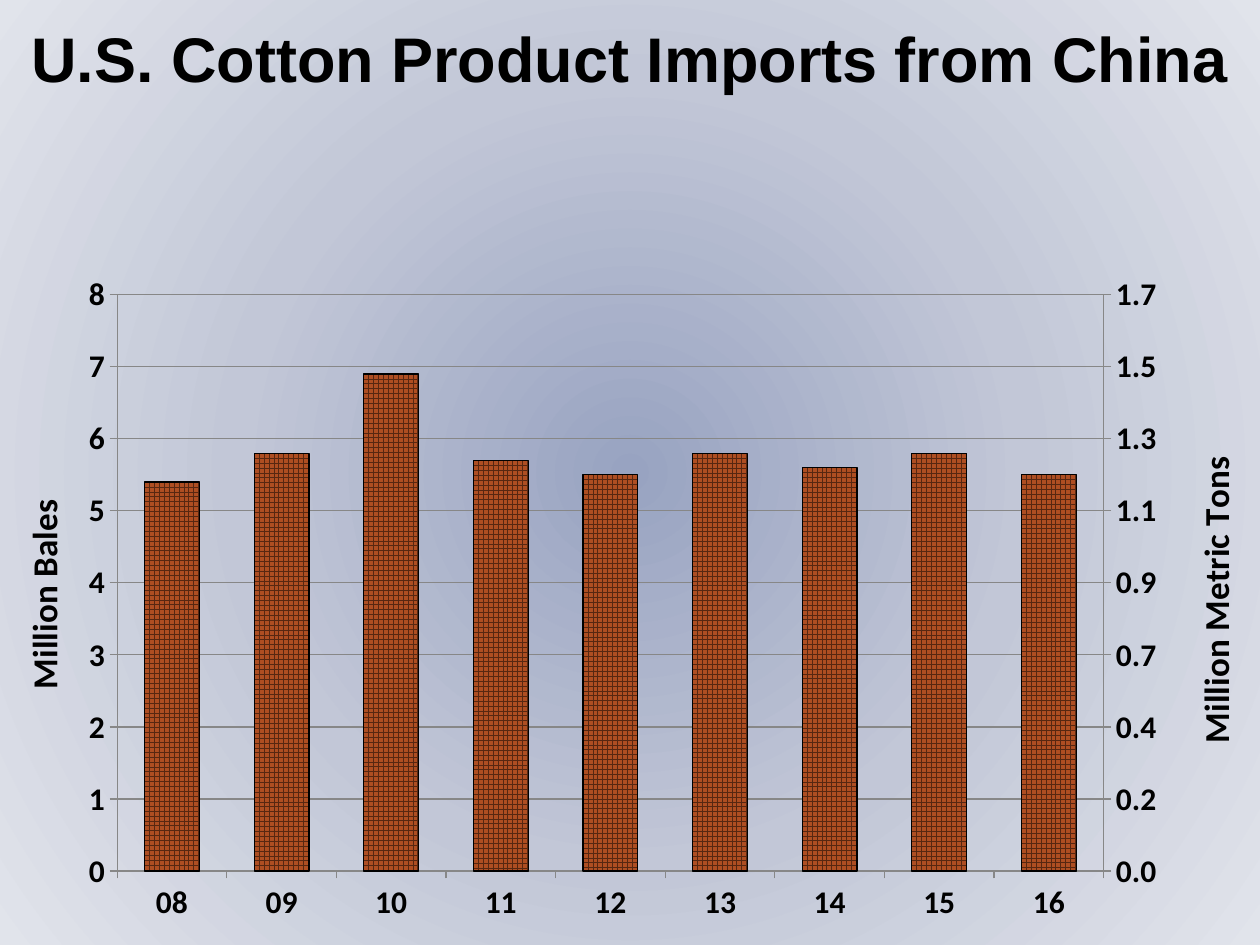
"""Build a slide with a two-scale column chart of cotton product imports."""
from copy import deepcopy

from pptx import Presentation
from pptx.chart.axis import CategoryAxis, ValueAxis
from pptx.chart.data import CategoryChartData
from pptx.dml.color import RGBColor
from pptx.enum.chart import XL_CHART_TYPE, XL_TICK_LABEL_POSITION, XL_TICK_MARK
from pptx.enum.dml import MSO_PATTERN
from pptx.enum.text import MSO_ANCHOR, PP_ALIGN
from pptx.oxml import parse_xml
from pptx.oxml.ns import nsdecls, qn
from pptx.util import Inches, Pt

TITLE = "U.S. Cotton Product Imports from China"
YEARS = ["08", "09", "10", "11", "12", "13", "14", "15", "16"]
SERIES = {
    "Million Bales": [5.4, 5.8, 6.9, 5.7, 5.5, 5.8, 5.6, 5.8, 5.5],
    "Million Metric Tons": [1.17, 1.26, 1.5, 1.25, 1.21, 1.26, 1.22, 1.26, 1.19],
}
BALES_MAX = 8
BALES_PER_TON = 4.59
GLOW = [(0, "98A3C1"), (50, "C2C7D7"), (100, "E1E4EB")]
GREY, BLACK = "878787", "000000"
PLOT_BOX = {"x": 0.093, "y": 0.093, "w": 0.783, "h": 0.804}
LEFT_TITLE, RIGHT_TITLE = {"x": 0.01, "y": 0.37}, {"x": 0.94, "y": 0.31}


def rgb(value):
    return RGBColor.from_string(value)


def set_format(obj, values):
    for name, value in values.items():
        setattr(obj, name, value)


def set_font(font, name, size):
    set_format(font, {"name": name, "size": Pt(size), "bold": True})
    font.color.rgb = rgb(BLACK)


def set_line(line, color, width=0):
    line.color.rgb = rgb(color)
    line.width = Pt(width)


def add_glow(s):
    stops = "".join(f'<a:gs pos="{pos * 1000}"><a:srgbClr val="{color}"/></a:gs>'
                    for pos, color in GLOW)
    centre = " ".join(f'{side}="50000"' for side in "ltrb")
    s.element.cSld.insert(0, parse_xml(
        f'<p:bg {nsdecls("p", "a")}><p:bgPr><a:gradFill><a:gsLst>{stops}</a:gsLst>'
        f'<a:path path="circle"><a:fillToRect {centre}/></a:path></a:gradFill>'
        '<a:effectLst/></p:bgPr></p:bg>'))


def place(parent, box, inner=False):
    """Give a chart part a manual layout in shares of the chart."""
    target = '<c:layoutTarget val="inner"/>' if inner else ""
    modes = "".join(f'<c:{key}Mode val="edge"/>' for key in "xy")
    sizes = "".join(f'<c:{key} val="{value}"/>' for key, value in box.items())
    layout = parse_xml(f'<c:layout {nsdecls("c")}><c:manualLayout>{target}{modes}{sizes}'
                       '</c:manualLayout></c:layout>')
    old = parent.find(qn("c:layout"))
    if old is not None:
        parent.replace(old, layout)
    else:
        parent.insert(1 if parent.find(qn("c:tx")) is not None else 0, layout)


def add_right_axis(plot_area):
    """Move the second series to its own axes and return the value axis."""
    bars, cat, val = (plot_area.find(qn(f"c:{tag}")) for tag in ("barChart", "catAx", "valAx"))
    bars2, cat2, val2 = (deepcopy(part) for part in (bars, cat, val))
    bars.remove(bars.findall(qn("c:ser"))[1])
    bars2.remove(bars2.findall(qn("c:ser"))[0])
    bars.addnext(bars2)
    val.addnext(cat2)
    cat2.addnext(val2)
    ids = {ax.find(qn("c:axId")).get("val"): new for ax, new in ((cat, "5001"), (val, "5002"))}
    for part in (bars2, cat2, val2):
        for ref in part.findall(qn("c:axId")) + part.findall(qn("c:crossAx")):
            ref.set("val", ids[ref.get("val")])
    for tag, value in (("axPos", "r"), ("crosses", "max")):
        val2.find(qn(f"c:{tag}")).set("val", value)
    CategoryAxis(cat2).visible = False
    return ValueAxis(val2)


def style_value_axis(axis, title, top, number_format, title_box, grid):
    set_format(axis, {"minimum_scale": 0, "maximum_scale": top, "major_unit": top / BALES_MAX,
                      "major_tick_mark": XL_TICK_MARK.OUTSIDE, "has_major_gridlines": grid})
    set_format(axis.tick_labels, {"number_format": number_format,
                                  "number_format_is_linked": False})
    set_line(axis.format.line, GREY)
    if grid:
        set_line(axis.major_gridlines.format.line, GREY)
    tf = axis.axis_title.text_frame
    tf.text = title
    set_font(tf.paragraphs[0].runs[0].font, "Calibri", 20)
    place(tf._element.getparent().getparent(), title_box)


def add_import_chart(s, width, height):
    data = CategoryChartData()
    data.categories = YEARS
    for number, values in enumerate(SERIES.values(), 1):
        data.add_series(f"Series {number}", values)
    top = Inches(1.81)
    chart = s.shapes.add_chart(XL_CHART_TYPE.COLUMN_CLUSTERED, 0, top, width,
                               height - top, data).chart
    set_format(chart, {"has_legend": False, "has_title": False})
    set_font(chart.font, "Calibri", 18)
    set_format(chart.plots[0], {"gap_width": 100, "vary_by_categories": False})
    bales, tons = chart.plots[0].series
    bales.format.fill.patterned()
    bales.format.fill.pattern = MSO_PATTERN.LARGE_GRID
    bales.format.fill.fore_color.rgb = rgb("572711")
    bales.format.fill.back_color.rgb = rgb("AE4E22")
    set_line(bales.format.line, BLACK, 0.75)
    tons.format.fill.background()
    tons.format.line.fill.background()

    plot_area = chart._chartSpace.chart.plotArea
    left = chart.value_axis
    right = add_right_axis(plot_area)
    place(plot_area, PLOT_BOX, inner=True)
    set_format(chart.category_axis, {"major_tick_mark": XL_TICK_MARK.OUTSIDE,
                                     "tick_label_position": XL_TICK_LABEL_POSITION.LOW})
    set_line(chart.category_axis.format.line, GREY)
    left_name, right_name = SERIES
    style_value_axis(left, left_name, BALES_MAX, "#,##0", LEFT_TITLE, True)
    style_value_axis(right, right_name, BALES_MAX / BALES_PER_TON, "#,##0.0", RIGHT_TITLE, False)


def add_title(s, width):
    tf = s.shapes.add_textbox(0, Inches(0.08), width, Inches(0.75)).text_frame
    set_format(tf, {"word_wrap": True, "vertical_anchor": MSO_ANCHOR.MIDDLE})
    p = tf.paragraphs[0]
    p.alignment = PP_ALIGN.CENTER
    r = p.add_run()
    r.text = TITLE
    set_font(r.font, "Arial", 36)


def main():
    prs = Presentation()
    set_format(prs, {"slide_width": Inches(10), "slide_height": Inches(7.5)})
    s = prs.slides.add_slide(prs.slide_layouts[6])
    add_glow(s)
    add_title(s, prs.slide_width)
    add_import_chart(s, prs.slide_width, prs.slide_height)
    prs.save("out.pptx")


if __name__ == "__main__":
    main()
